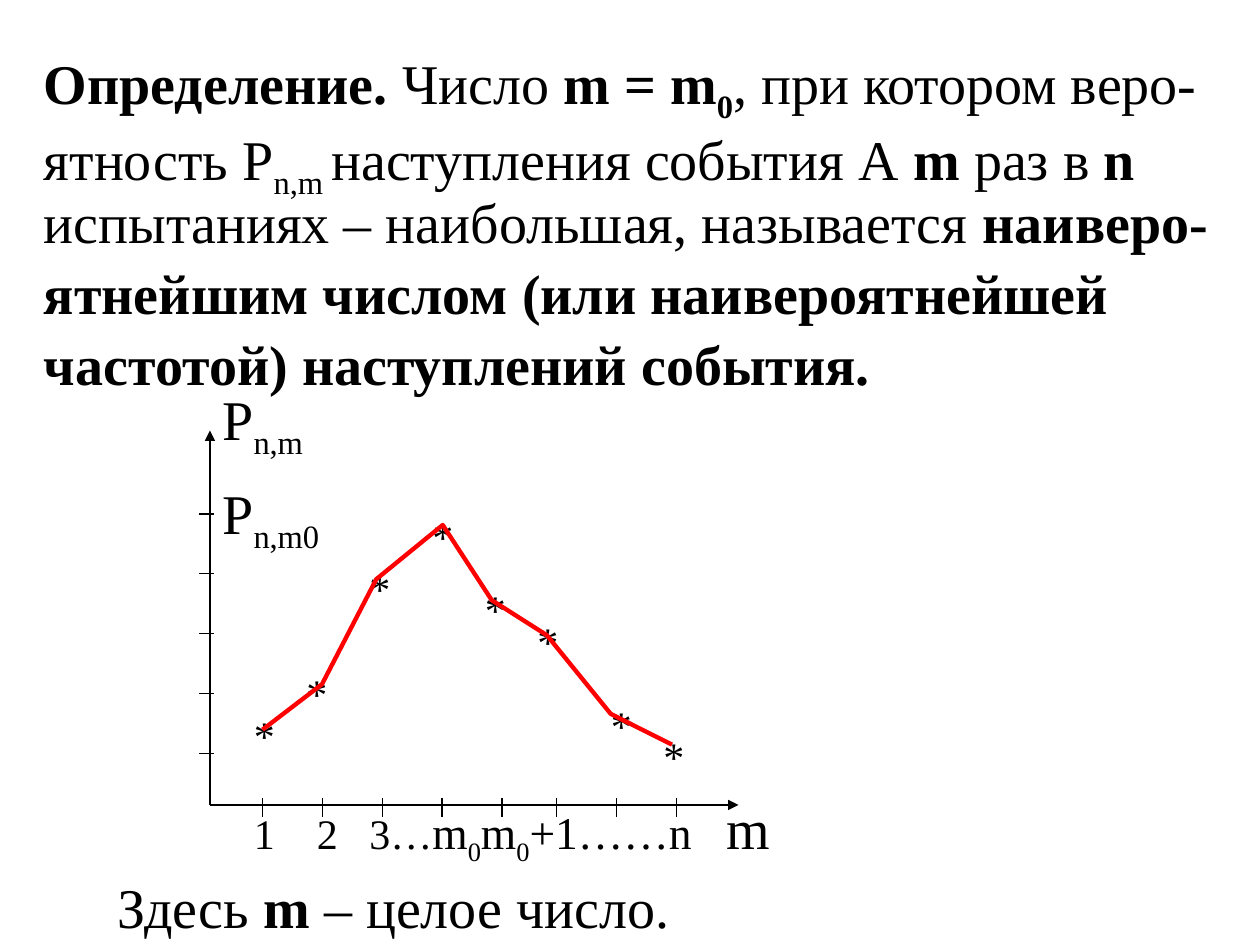
import pptx
import pptx.util
import pptx.dml.color
import pptx.enum.shapes
import pptx.oxml.ns
from lxml import etree

Pt = pptx.util.Pt
qn = pptx.oxml.ns.qn
COLORS = {"ink": "000000", "curve": "FF0000"}
FONT = "Times New Roman"


def rgb(name):
    return pptx.dml.color.RGBColor.from_string(COLORS[name])


def add_text(slide, left, top, width, height, pieces, size=32, spacing=1.0):
    """Pieces are (text, style); style holds b for bold, s for subscript."""
    box = slide.shapes.add_textbox(Pt(left), Pt(top), Pt(width), Pt(height))
    box.text_frame.word_wrap = True
    paragraph = box.text_frame.paragraphs[0]
    paragraph.line_spacing = spacing
    for text, style in pieces:
        run = paragraph.add_run()
        run.text = text
        run.font.name = FONT
        run.font.size = Pt(size)
        run.font.bold = "b" in style
        run.font.color.rgb = rgb("ink")
        if "s" in style:
            run.font._element.set("baseline", "-25000")
    return paragraph


def add_tab_stops(paragraph, positions):
    tab_list = etree.SubElement(paragraph._p.get_or_add_pPr(), qn("a:tabLst"))
    for position in positions:
        etree.SubElement(tab_list, qn("a:tab"), pos=str(Pt(position)), algn="l")


def add_line(slide, x1, y1, x2, y2, arrow=False):
    line = slide.shapes.add_connector(
        pptx.enum.shapes.MSO_CONNECTOR.STRAIGHT, Pt(x1), Pt(y1), Pt(x2), Pt(y2))
    line.line.color.rgb = rgb("ink")
    line.line.width = Pt(0.75)
    if arrow:
        etree.SubElement(line.line._get_or_add_ln(), qn("a:tailEnd"), type="triangle")
    etree.SubElement(line._element.spPr, qn("a:effectLst"))


def add_curve(slide, points):
    builder = slide.shapes.build_freeform(
        Pt(points[0][0]), Pt(points[0][1]), scale=1.0)
    builder.add_line_segments([(Pt(x), Pt(y)) for x, y in points[1:]], close=False)
    curve = builder.convert_to_shape()
    curve.shadow.inherit = False
    curve.fill.background()
    curve.line.color.rgb = rgb("curve")
    curve.line.width = Pt(2.5)


def add_definition(slide):
    add_text(slide, 18, 24, 684, 84, [
        ("Определение. ", "b"), ("Число ", ""), ("m = m", "b"), ("0", "bs"),
        (", при котором веро-ятность P", ""), ("n,m ", "s"),
        ("наступления события А ", ""), ("m ", "b"), ("раз в ", ""), ("n", "b")])
    add_text(slide, 18, 102, 690, 122, [
        ("испытаниях – наибольшая, называется ", ""),
        ("наиверо-ятнейшим числом (или наивероятнейшей частотой) "
         "наступлений события.", "b")], spacing=1.05)


def add_axes(slide):
    origin_x, origin_y = 120, 460
    add_line(slide, origin_x, origin_y, origin_x, 246, arrow=True)
    add_line(slide, origin_x, origin_y, 422, origin_y, arrow=True)
    # Ticks on the probability axis, then on the m axis
    for step in range(5):
        y = 430.5 - 34.2 * step
        add_line(slide, 114, y, 122.5, y)
    for start, count in ((150, 5), (318, 3)):
        for step in range(count):
            x = start + 34.2 * step
            add_line(slide, x, 456, x, 467)
    # Axis labels
    add_text(slide, 408, 450, 40, 32, [("m", "")])
    add_text(slide, 120, 216, 66, 40, [("P", ""), ("n,m", "s")])
    add_text(slide, 120, 270, 80, 42, [("P", ""), ("n,m0", "s")])
    values = add_text(slide, 138, 456, 274, 40, [
        ("1\t2\t3…", ""), ("m", ""), ("0", "s"), ("m", ""), ("0", "s"),
        ("+1……n", "")], size=26)
    values.runs[0].font.size = Pt(24)
    add_tab_stops(values, (36, 66))


def add_distribution(slide):
    stars = [(138, 402), (168, 378), (204, 318), (240, 288),
             (270, 330), (300, 348), (342, 396), (372, 414)]
    for left, top in stars:
        add_text(slide, left, top, 26, 29, [("*", "")], size=24)
    add_curve(slide, [(150, 417), (184, 391), (215, 331), (253, 300),
                      (281, 343), (312.5, 363), (349, 408), (384, 425.5)])


def main():
    deck = pptx.Presentation()
    deck.slide_width, deck.slide_height = Pt(720), Pt(540)
    slide = deck.slides.add_slide(deck.slide_layouts[6])
    add_definition(slide)
    add_axes(slide)
    add_distribution(slide)
    # Closing remark
    add_text(slide, 60, 495, 348, 45,
             [("Здесь ", ""), ("m", "b"), (" – целое число.", "")])
    deck.save("out.pptx")


if __name__ == "__main__":
    main()
